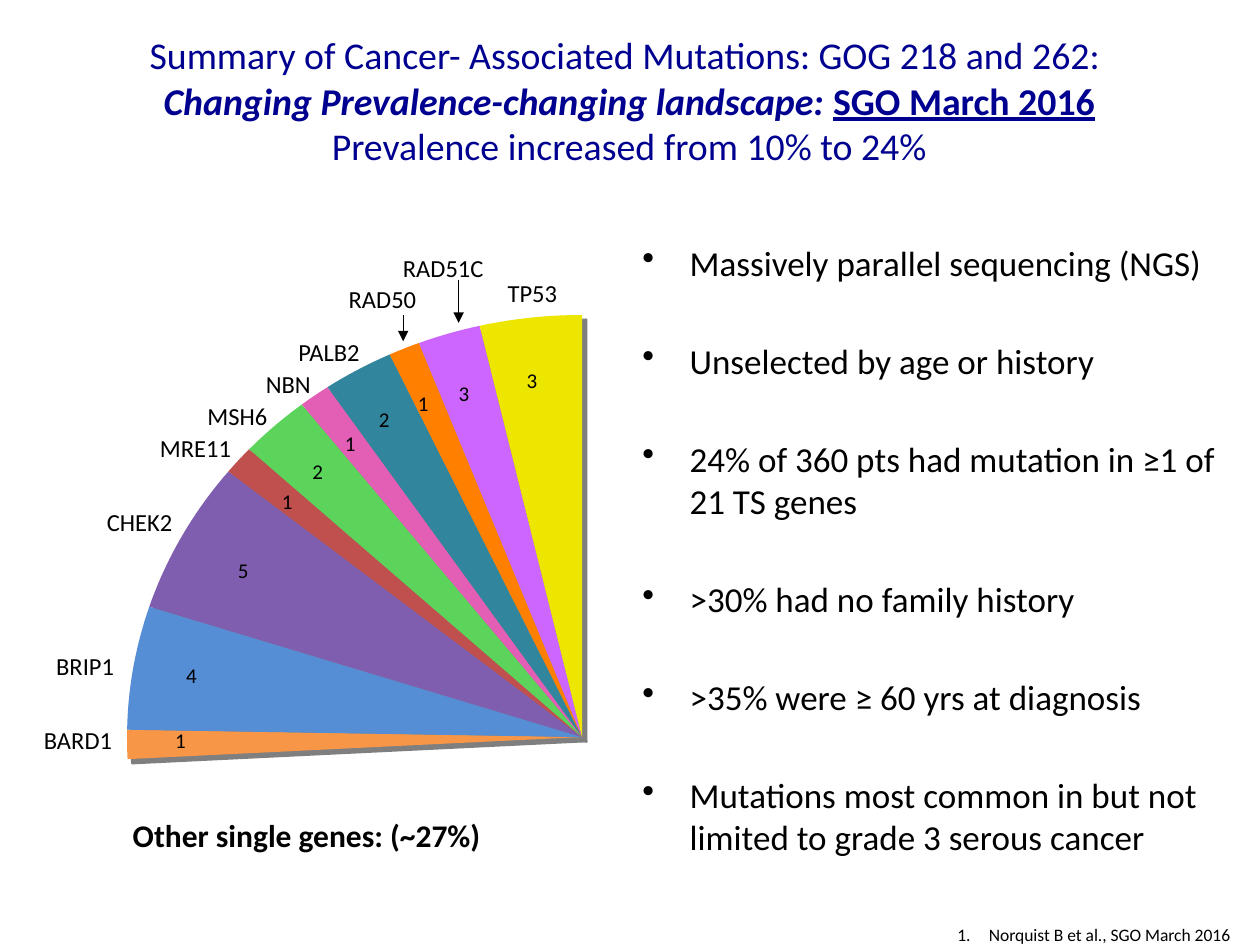
"""Build a slide on cancer-associated mutations with a fan of single genes."""
import math
from dataclasses import dataclass

import pptx
import pptx.dml.color
import pptx.enum.shapes
import pptx.enum.text
import pptx.oxml.ns
import pptx.util
from lxml import etree

Pt = pptx.util.Pt
ALIGN = pptx.enum.text.PP_ALIGN
FONT = "Calibri"
COLORS = {
    "title": "000090", "text": "000000", "shadow": "7F7F7F",
    "BARD1": "F79646", "BRIP1": "558ED5", "CHEK2": "7F5EAF",
    "MRE11": "C0504D", "MSH6": "5CD45C", "NBN": "E25FB5",
    "PALB2": "31859C", "RAD50": "FF8000", "RAD51C": "CC66FF",
    "TP53": "ECE600",
}
CENTER_X, CENTER_Y = 332.6, 421.2
RADIUS_X, RADIUS_Y = 260, 241.2
FIRST_ANGLE = -3
SHADOW_OFFSET = 2.5


@dataclass(frozen=True)
class Gene:
    """A slice with its name, count, sweep in degrees and label places."""
    name: str
    count: int
    sweep: int
    name_at: tuple[float, float]
    name_width: float
    count_at: tuple[float, float]


@dataclass(frozen=True)
class Phrase:
    """A piece of a title line."""
    text: str
    bold: bool = False
    italic: bool = False
    underline: bool = False


GENES = [
    Gene("BARD1", 1, 4, (18, 411), 100, (93, 412)),
    Gene("BRIP1", 4, 17, (25, 368.5), 89, (99.3, 375)),
    Gene("CHEK2", 5, 21, (54, 286), 100, (128.9, 315.3)),
    Gene("MRE11", 1, 4, (84.3, 244), 100, (154, 275.8)),
    Gene("MSH6", 2, 9, (111.5, 225.4), 86, (171.4, 258.5)),
    Gene("NBN", 1, 4, (144.8, 207.5), 71, (190, 242.7)),
    Gene("PALB2", 2, 9, (163.5, 189.3), 94, (209.5, 229)),
    Gene("RAD50", 1, 4, (192.2, 159), 97, (231.8, 219.6)),
    Gene("RAD51C", 3, 8, (223.2, 141), 114, (255, 213.8)),
    Gene("TP53", 3, 13, (283, 155.5), 77, (293.8, 206.6)),
]
TITLE_LINES = [
    [Phrase("Summary of Cancer- Associated Mutations: GOG 218 and 262: ")],
    [Phrase("Changing Prevalence-changing landscape: ", bold=True, italic=True),
     Phrase("SGO March 2016", bold=True, underline=True)],
    [Phrase("Prevalence increased from 10% to 24%")],
]
FINDINGS = [
    "Massively parallel sequencing (NGS)",
    "Unselected by age or history",
    "24% of 360 pts had mutation in ≥1 of 21 TS genes",
    ">30% had no family history",
    ">35% were ≥ 60 yrs at diagnosis",
    "Mutations most common in but not limited to grade 3 serous cancer",
]
ARROWS = [(230.4, 180, 195), (262.1, 160, 184.5)]


def rgb(color: str) -> pptx.dml.color.RGBColor:
    """Look up a named colour."""
    return pptx.dml.color.RGBColor.from_string(COLORS[color])


def style_run(run, size: float, color: str = "text", bold: bool = False) -> None:
    """Set the font of one run."""
    run.font.name = FONT
    run.font.size = Pt(size)
    run.font.bold = bold
    run.font.color.rgb = rgb(color)


def add_frame(slide, left: float, top: float, width: float, height: float):
    """Add a wrapping text box and return its text frame."""
    box = slide.shapes.add_textbox(Pt(left), Pt(top), Pt(width), Pt(height))
    box.text_frame.word_wrap = True
    return box.text_frame


def add_label(slide, text: str, at: tuple[float, float], width: float,
              size: float, bold: bool = False, align=ALIGN.LEFT) -> None:
    """Add a one-line label."""
    frame = add_frame(slide, *at, width, round(size * 1.22 + 7.2, 2))
    frame.text = text
    frame.paragraphs[0].alignment = align
    style_run(frame.paragraphs[0].runs[0], size, bold=bold)


def add_list(frame, items: list[str], size: float, indent: float,
             marker: str, attributes: dict[str, str], gap: float = 0) -> None:
    """Fill a text frame with marked, hanging paragraphs."""
    for index, item in enumerate(items):
        paragraph = frame.add_paragraph() if index else frame.paragraphs[0]
        paragraph.text = item
        properties = paragraph._p.get_or_add_pPr()
        properties.set("marL", str(Pt(indent)))
        properties.set("indent", str(-Pt(indent)))
        etree.SubElement(properties, pptx.oxml.ns.qn(marker), attributes)
        if index:
            paragraph.space_before = Pt(gap)
        style_run(paragraph.runs[0], size)


def add_title(slide) -> None:
    """Add the three-line title."""
    frame = add_frame(slide, 8.6, 12.2, 702, 90)
    frame.vertical_anchor = pptx.enum.text.MSO_ANCHOR.MIDDLE
    paragraph = frame.paragraphs[0]
    paragraph.alignment = ALIGN.CENTER
    for index, line in enumerate(TITLE_LINES):
        if index:
            paragraph.add_line_break()
        for phrase in line:
            run = paragraph.add_run()
            run.text = phrase.text
            style_run(run, 21.6, "title", phrase.bold)
            run.font.italic = phrase.italic
            run.font.underline = phrase.underline


def add_slice(slide, start: int, sweep: int, color: str,
              offset: float = 0, outlined: bool = False) -> None:
    """Draw one slice of the fan, its angles rising clockwise from the left."""
    x, y = CENTER_X + offset, CENTER_Y + offset
    angles = [math.radians(start + step) for step in range(sweep + 1)]
    rim = [(Pt(x - RADIUS_X * math.cos(angle)), Pt(y - RADIUS_Y * math.sin(angle)))
           for angle in angles]
    builder = slide.shapes.build_freeform(Pt(x), Pt(y))
    builder.add_line_segments(rim, close=True)
    wedge = builder.convert_to_shape()
    wedge.shadow.inherit = False
    wedge.fill.solid()
    wedge.fill.fore_color.rgb = rgb(color)
    if outlined:
        wedge.line.color.rgb = rgb(color)
        wedge.line.width = Pt(1)
    else:
        wedge.line.fill.background()


def add_arrow(slide, x: float, top: float, bottom: float) -> None:
    """Draw a thin arrow pointing down."""
    arrow = slide.shapes.add_connector(
        pptx.enum.shapes.MSO_CONNECTOR.STRAIGHT, Pt(x), Pt(top), Pt(x), Pt(bottom))
    arrow.line.color.rgb = rgb("text")
    arrow.line.width = Pt(0.75)
    qn = pptx.oxml.ns.qn
    etree.SubElement(arrow.line._get_or_add_ln(), qn("a:tailEnd"), type="triangle")
    etree.SubElement(arrow._element.spPr, qn("a:effectLst"))


def add_fan(slide) -> None:
    """Draw the fan of genes with its shadow, labels and arrows."""
    starts = [FIRST_ANGLE + sum(gene.sweep for gene in GENES[:index])
              for index in range(len(GENES))]
    for gene, start in zip(GENES, starts):
        add_slice(slide, start, gene.sweep, "shadow", SHADOW_OFFSET, outlined=True)
    for gene, start in zip(GENES, starts):
        add_slice(slide, start, gene.sweep, gene.name)
    for gene in GENES:
        add_label(slide, gene.name, gene.name_at, gene.name_width, 14)
        add_label(slide, str(gene.count), gene.count_at, 28, 12)
    for arrow in ARROWS:
        add_arrow(slide, *arrow)


def main() -> None:
    """Build and save the slide."""
    deck = pptx.Presentation()
    deck.slide_width, deck.slide_height = Pt(720), Pt(540)
    slide = deck.slides.add_slide(deck.slide_layouts[6])
    add_title(slide)
    findings = add_frame(slide, 360, 134.5, 354, 364)
    add_list(findings, FINDINGS, 20, 27, "a:buChar", {"char": "•"}, gap=32)
    add_fan(slide)
    add_label(slide, "Other single genes: (~27%)", (18, 463), 314.6, 18,
              bold=True, align=ALIGN.CENTER)
    reference = add_frame(slide, 540, 524.2, 180, 19.4)
    add_list(reference, ["Norquist B et al., SGO March 2016"], 10, 18,
             "a:buAutoNum", {"type": "arabicPeriod"})
    deck.save("out.pptx")


if __name__ == "__main__":
    main()
